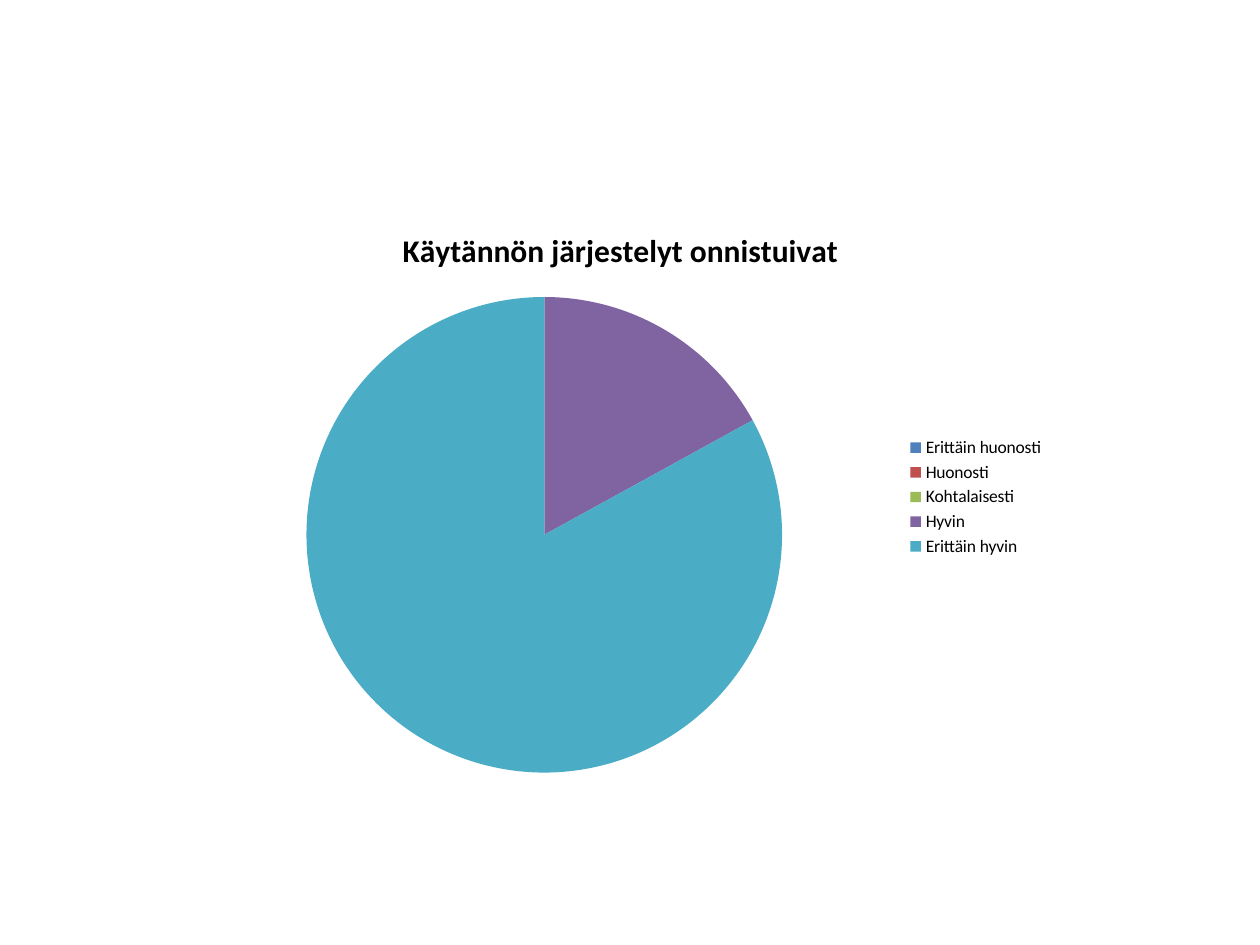
from dataclasses import dataclass

import pptx
import pptx.chart.data
import pptx.dml.color
import pptx.enum.chart
import pptx.util
from pptx.util import Inches

FONT = "Calibri"
COLORS = {
    "text": "000000",
    "blue": "4F81BD",
    "red": "C0504D",
    "green": "9BBB59",
    "purple": "8064A2",
    "teal": "4BACC6",
}


@dataclass(frozen=True)
class Answer:
    label: str
    percent: int
    color: str


QUESTION = "Käytännön järjestelyt onnistuivat"
ANSWERS = [
    Answer("Erittäin huonosti", 0, "blue"),
    Answer("Huonosti", 0, "red"),
    Answer("Kohtalaisesti", 0, "green"),
    Answer("Hyvin", 17, "purple"),
    Answer("Erittäin hyvin", 83, "teal"),
]


def rgb(name: str) -> pptx.dml.color.RGBColor:
    return pptx.dml.color.RGBColor.from_string(COLORS[name])


def format_font(font, *, size: float, bold: bool = False, color: str = "text") -> None:
    font.name = FONT
    font.size = pptx.util.Pt(size)
    font.bold = bold
    font.color.rgb = rgb(color)


def write_text(text_frame, text: str, **font_format) -> None:
    text_frame.text = text
    format_font(text_frame.paragraphs[0].runs[0].font, **font_format)


def add_answer_pie(slide, question: str, answers: list[Answer]) -> None:
    data = pptx.chart.data.CategoryChartData()
    data.categories = [answer.label for answer in answers]
    data.add_series(question, [answer.percent for answer in answers])
    chart = slide.shapes.add_chart(
        pptx.enum.chart.XL_CHART_TYPE.PIE,
        Inches(1.46), Inches(1.62), Inches(6.93), Inches(4.65), data,
    ).chart
    format_font(chart.font, size=10)

    chart.has_title = True
    write_text(chart.chart_title.text_frame, question, size=18, bold=True)
    chart.chart_title.include_in_layout = False

    chart.has_legend = True
    chart.legend.position = pptx.enum.chart.XL_LEGEND_POSITION.RIGHT
    chart.legend.include_in_layout = False

    plot = chart.plots[0]
    plot.vary_by_categories = True
    for index, answer in enumerate(answers):
        fill = plot.series[0].points[index].format.fill
        fill.solid()
        fill.fore_color.rgb = rgb(answer.color)


def main() -> None:
    presentation = pptx.Presentation()
    presentation.slide_width = Inches(10)
    presentation.slide_height = Inches(7.5)
    blank_layout = presentation.slide_layouts[6]
    slide = presentation.slides.add_slide(blank_layout)
    add_answer_pie(slide, QUESTION, ANSWERS)
    presentation.save("out.pptx")


if __name__ == "__main__":
    main()
